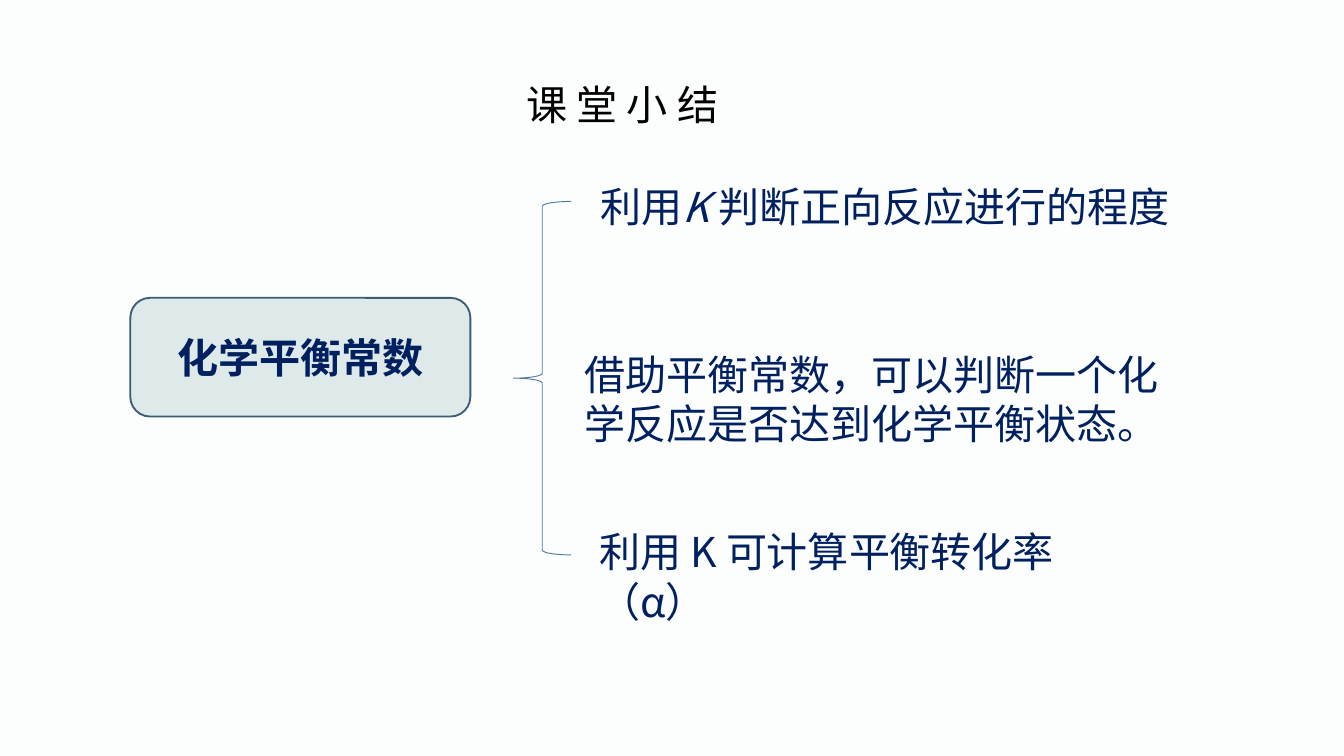
from typing import NamedTuple

from pptx import Presentation
from pptx import util as u
from pptx.dml.color import RGBColor
from pptx.enum import shapes, text
from pptx.oxml.ns import qn

WIDTH = u.Inches(10)
HEIGHT = WIDTH * 9 // 16
PAPER = RGBColor(0xFC, 0xFD, 0xFD)
BLACK = RGBColor(0x00, 0x00, 0x00)
NAVY = RGBColor(0x00, 0x20, 0x60)
MIST = RGBColor(0xDE, 0xE9, 0xE9)
SLATE = RGBColor(0x3E, 0x5C, 0x74)
STEEL = RGBColor(0x54, 0x7D, 0x9D)
ARIAL, NOTO = "Arial", "Noto Sans CJK SC"
TEXT_SIZE = u.Pt(22)


class Area(NamedTuple):
    """Left, top, width and height in percent of the slide's size."""
    left: float
    top: float
    width: float
    height: float

    def lengths(self) -> list[int]:
        return [round(share * side / 100)
                for share, side in zip(self, (WIDTH, HEIGHT, WIDTH, HEIGHT))]


class Run(NamedTuple):
    words: str
    italic: bool = False


class Note(NamedTuple):
    area: Area
    runs: tuple[Run, ...]
    font: str = NOTO
    color: RGBColor = NAVY


TOPIC = Run("化学平衡常数")
TOPIC_AREA = Area(9.7, 39.4, 25.3, 15.7)
BRACE_AREA = Area(38.2, 26.65, 4.3, 46.75)
NOTES = (
    Note(Area(38.2, 9.6, 41.6, 8.4), (Run("课 堂 小 结"),), ARIAL, BLACK),
    Note(Area(43.7, 23.1, 44.6, 8.4),
         (Run("利用"), Run("K ", italic=True), Run("判断正向反应进行的程度"))),
    Note(Area(42.5, 45.35, 44.9, 14.9),
         (Run("借助平衡常数，可以判断一个化学反应是否达到化学平衡状态。"),)),
    Note(Area(43.6, 68.8, 43.8, 8.4), (Run("利用 K 可计算平衡转化率（α）"),)),
)


def write(frame, runs: tuple[Run, ...], font: str, color: RGBColor):
    """Fill the first paragraph, with Noto for its Chinese characters."""
    frame.word_wrap = True
    paragraph = frame.paragraphs[0]
    paragraph.font.size = TEXT_SIZE
    paragraph.font.name = font
    paragraph.font.color.rgb = color
    for part in runs:
        run = paragraph.add_run()
        run.text = part.words
        if part.italic:
            run.font.italic = True
    latin = paragraph._p.pPr.find(qn("a:defRPr")).find(qn("a:latin"))
    latin.addnext(latin.makeelement(qn("a:ea"), {"typeface": NOTO}))
    return paragraph


def add_note(slide, note: Note) -> None:
    box = slide.shapes.add_textbox(*note.area.lengths())
    write(box.text_frame, note.runs, note.font, note.color)
    box.text_frame.auto_size = text.MSO_AUTO_SIZE.SHAPE_TO_FIT_TEXT


def add_outlined(slide, kind, area: Area, color: RGBColor, weight: float):
    shape = slide.shapes.add_shape(kind, *area.lengths())
    shape.shadow.inherit = False
    shape.line.color.rgb = color
    shape.line.width = u.Pt(weight)
    return shape


def add_topic(slide) -> None:
    card = add_outlined(slide, shapes.MSO_SHAPE.ROUNDED_RECTANGLE, TOPIC_AREA, SLATE, 1)
    card.fill.solid()
    card.fill.fore_color.rgb = MIST
    card.text_frame.vertical_anchor = text.MSO_ANCHOR.MIDDLE
    label = write(card.text_frame, (TOPIC,), NOTO, NAVY)
    label.alignment = text.PP_ALIGN.CENTER
    label.font.bold = True


def main() -> None:
    deck = Presentation()
    deck.slide_width, deck.slide_height = WIDTH, HEIGHT
    slide = deck.slides.add_slide(deck.slide_layouts[6])
    slide.background.fill.solid()
    slide.background.fill.fore_color.rgb = PAPER

    add_topic(slide)
    brace = add_outlined(slide, shapes.MSO_SHAPE.LEFT_BRACE, BRACE_AREA, STEEL, 0.5)
    brace.fill.background()
    for note in NOTES:
        add_note(slide, note)
    deck.save("out.pptx")


if __name__ == "__main__":
    main()
